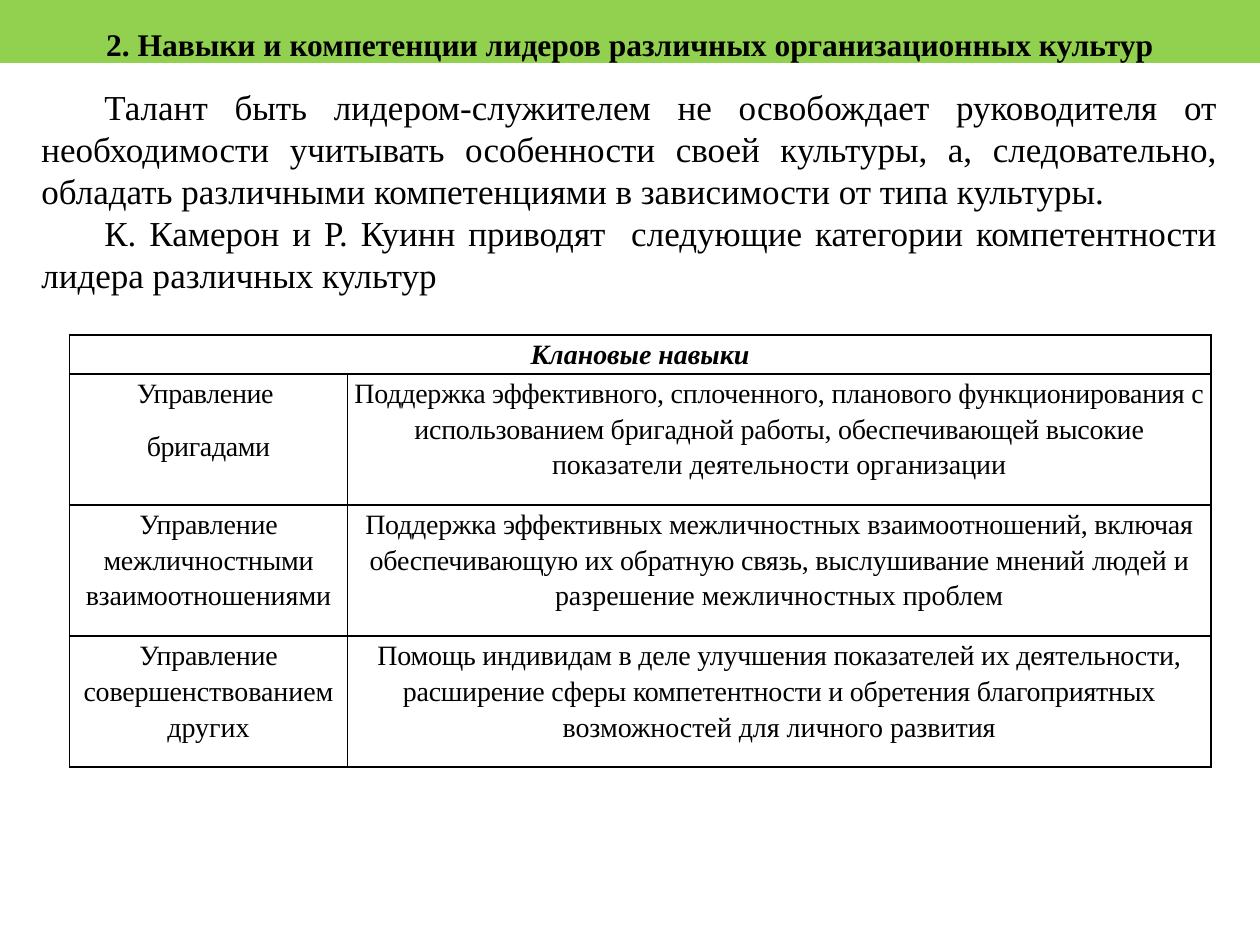
"""Build a slide on leadership skills with a heading band, two paragraphs and a skills table."""
from lxml import etree
from pptx import Presentation
from pptx import util as u
from pptx.dml.color import RGBColor
from pptx.enum import shapes, text
from pptx.oxml.ns import qn

WIDTH, HEIGHT = 10, 7.5
FONT = "Times New Roman"
COLORS = {"band": "92D050", "ink": "000000", "paper": "FFFFFF"}
TITLE = "2. Навыки и компетенции лидеров различных организационных культур"
BODY = [
    "Талант быть лидером-служителем не освобождает руководителя от необходимости учитывать "
    "особенности своей культуры, а, следовательно, обладать различными компетенциями "
    "в зависимости от типа культуры.",
    "К. Камерон и Р. Куинн приводят  следующие категории компетентности лидера различных культур ",
]
TABLE_TITLE = "Клановые навыки"
TIGHT, TIGHTER, NORMAL = -10, -20, 0
SKILLS = [
    ([[("Управление ", TIGHTER)], [("бригадами", TIGHTER)]],
     [[("Поддержка эффективного, сплоченного, планового функционирования с использованием "
        "бригадной работы, обеспечивающей высокие ", TIGHT),
       ("показатели деятельности организации", NORMAL)]]),
    ([[("Управление межличностными взаимоотно", TIGHT), ("шениями", NORMAL)]],
     [[("Поддержка эффективных межличностных взаимоотношений, включая обеспечивающую "
        "их обратную связь, выслушивание мнений ", TIGHT),
       ("людей и разрешение межличностных проблем", NORMAL)]]),
    ([[("Управление совершен", TIGHT), ("ствованием других", NORMAL)]],
     [[("Помощь индивидам в деле улучшения показателей их деятельности, расширение сферы "
        "компетентности и обретения благоприятных ", TIGHT),
       ("возможностей для личного развития", NORMAL)]]),
]
COLUMNS = [2.21, 6.85]
ROWS = [0.28] + [1.04] * len(SKILLS)


def color(name):
    return RGBColor.from_string(COLORS[name])


def format_runs(paragraph, size, bold=False, italic=False):
    for run in paragraph.runs:
        font = run.font
        font.name, font.size = FONT, u.Pt(size)
        font.bold, font.italic = bold, italic
        font.color.rgb = color("ink")


def add_title(slide):
    band = slide.shapes.add_shape(shapes.MSO_SHAPE.RECTANGLE, 0, 0, u.Inches(WIDTH), u.Inches(HEIGHT / 15))
    band.shadow.inherit = False
    band.fill.solid()
    band.fill.fore_color.rgb = color("band")
    band.line.fill.background()
    frame = band.text_frame
    frame.word_wrap = True
    frame.auto_size = text.MSO_AUTO_SIZE.SHAPE_TO_FIT_TEXT
    frame.vertical_anchor = text.MSO_ANCHOR.TOP
    frame.text = TITLE
    paragraph = frame.paragraphs[0]
    paragraph.alignment = text.PP_ALIGN.CENTER
    paragraph.line_spacing = 1.5
    format_runs(paragraph, 18, bold=True)


def add_body(slide):
    box = slide.shapes.add_textbox(*map(u.Inches, (0.23, 0.62, 9.53, 1.78)))
    frame = box.text_frame
    frame.word_wrap = True
    frame.auto_size = text.MSO_AUTO_SIZE.SHAPE_TO_FIT_TEXT
    frame.vertical_anchor = text.MSO_ANCHOR.MIDDLE
    frame.text = "\n".join(BODY)
    for paragraph in frame.paragraphs:
        paragraph.alignment = text.PP_ALIGN.JUSTIFY
        properties = paragraph._p.get_or_add_pPr()
        properties.set("marL", "0")
        properties.set("indent", str(u.Inches(0.5)))
        format_runs(paragraph, 20)


def add_borders(cell):
    properties = cell._tc.get_or_add_tcPr()
    for index, side in enumerate(("lnL", "lnR", "lnT", "lnB")):
        line = etree.Element(qn(f"a:{side}"), w=str(u.Pt(1)))
        fill = etree.SubElement(line, qn("a:solidFill"))
        etree.SubElement(fill, qn("a:srgbClr"), val=COLORS["ink"])
        properties.insert(index, line)


def fill_cell(cell, paragraphs, emphasis=False):
    cell.margin_left = cell.margin_right = u.Inches(0.03)
    cell.margin_top = cell.margin_bottom = 0
    frame = cell.text_frame
    for index, parts in enumerate(paragraphs):
        paragraph = frame.add_paragraph() if index else frame.paragraphs[0]
        paragraph.alignment = text.PP_ALIGN.CENTER
        paragraph.line_spacing = 1.15
        paragraph.space_after = u.Pt(10)
        for words, spacing in parts:
            run = paragraph.add_run()
            run.text = words
            run.font._element.set("spc", str(spacing))
        format_runs(paragraph, 16, emphasis, emphasis)


def add_skills(slide):
    area = map(u.Inches, (0.55, 2.66, sum(COLUMNS), sum(ROWS)))
    table = slide.shapes.add_table(len(ROWS), len(COLUMNS), *area).table
    for column, width in zip(table.columns, COLUMNS):
        column.width = u.Inches(width)
    for row, height in zip(table.rows, ROWS):
        row.height = u.Inches(height)
    for cell in table.iter_cells():
        cell.fill.solid()
        cell.fill.fore_color.rgb = color("paper")
        add_borders(cell)
    table.cell(0, 0).merge(table.cell(0, 1))
    fill_cell(table.cell(0, 0), [[(TABLE_TITLE, NORMAL)]], emphasis=True)
    for row, skill in enumerate(SKILLS, start=1):
        for column, paragraphs in enumerate(skill):
            fill_cell(table.cell(row, column), paragraphs)


def main():
    presentation = Presentation()
    presentation.slide_width, presentation.slide_height = u.Inches(WIDTH), u.Inches(HEIGHT)
    slide = presentation.slides.add_slide(presentation.slide_layouts[6])
    add_title(slide)
    add_body(slide)
    add_skills(slide)
    presentation.save("out.pptx")


if __name__ == "__main__":
    main()
